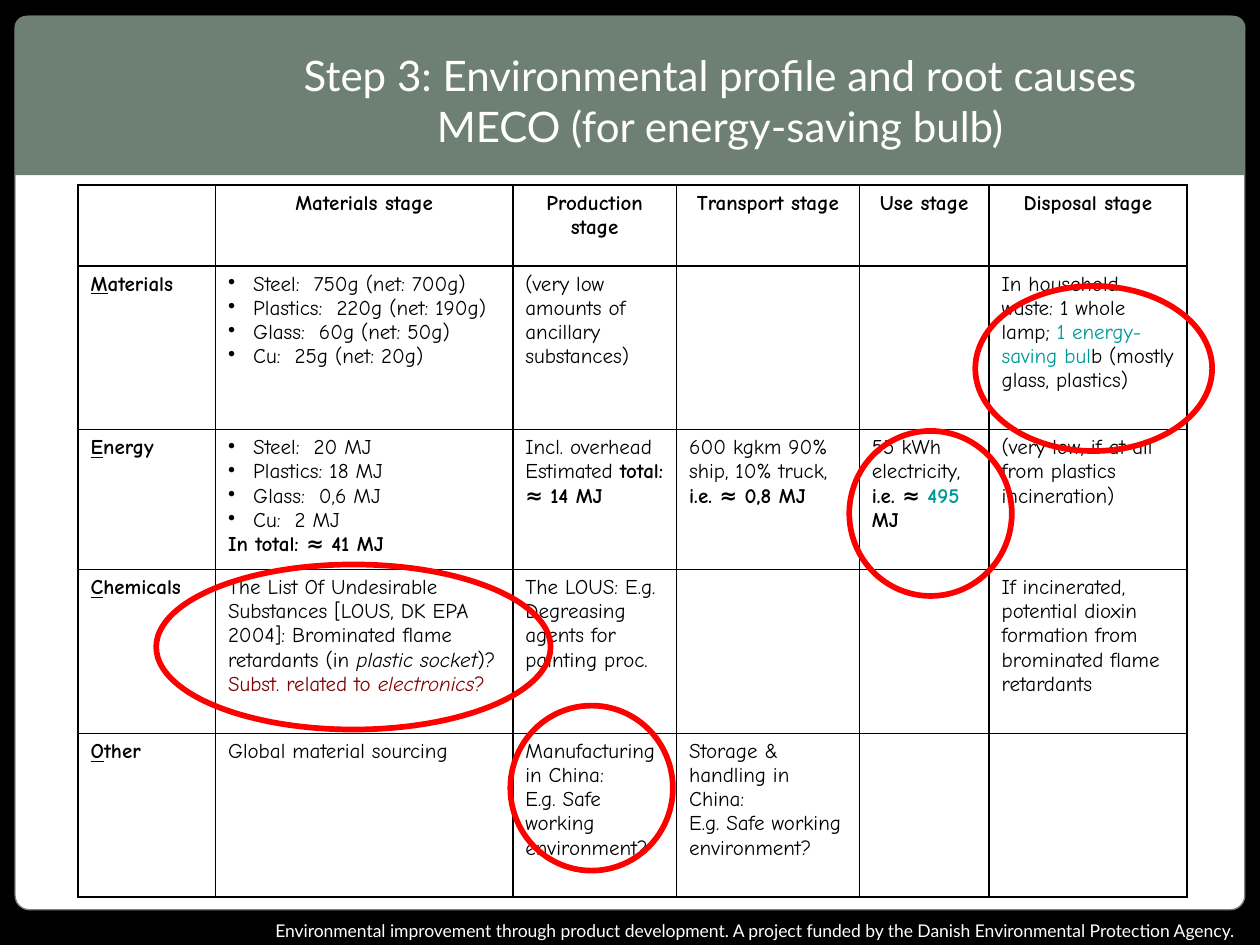
from dataclasses import dataclass

from lxml.etree import SubElement
from pptx import Presentation
from pptx.dml.color import RGBColor
from pptx.enum.shapes import MSO_SHAPE
from pptx.enum.text import MSO_ANCHOR, MSO_AUTO_SIZE, PP_ALIGN
from pptx.oxml.ns import qn
from pptx.util import Inches, Pt


@dataclass(frozen=True)
class Theme:
    black: RGBColor = RGBColor(0, 0, 0)
    white: RGBColor = RGBColor(255, 255, 255)
    grey: RGBColor = RGBColor(0x80, 0x80, 0x80)
    green: RGBColor = RGBColor(0x6E, 0x80, 0x73)
    red: RGBColor = RGBColor(255, 0, 0)
    teal: RGBColor = RGBColor(0, 0x99, 0x99)
    maroon: RGBColor = RGBColor(0x80, 0, 0)
    heading_font: str = "Lato"
    table_font: str = "Comic Neue"
    title_size: Pt = Pt(24)
    table_size: Pt = Pt(12)
    footer_size: Pt = Pt(10)


THEME = Theme()
TITLE = "Step 3: Environmental profile and root causes\vMECO (for energy-saving bulb)"
FOOTER = ("Environmental improvement through product development. "
          "A project funded by the Danish Environmental Protection Agency.")
STAGES = ["Materials stage", "Production stage", "Transport stage", "Use stage", "Disposal stage"]
COLUMN_WIDTHS = [1.09, 2.36, 1.3, 1.45, 1.03, 1.57]
ROW_HEIGHTS = [0.64, 1.3, 1.11, 1.3, 1.3]
BULLET_INDENT = Inches(0.2)

# Each cell is a list of paragraphs, each paragraph a list of (text, style) runs.
MECO = {
    "Materials": [
        [[("• Steel:  750g (net: 700g)", "")], [("• Plastics:  220g (net: 190g)", "")],
         [("• Glass:  60g (net: 50g)", "")], [("• Cu:  25g (net: 20g)", "")]],
        [[("(very low amounts of ancillary substances)", "")]],
        [],
        [],
        [[("In household waste: 1 whole lamp; ", ""), ("1 energy-saving bul", "teal"),
          ("b (mostly glass, plastics)", "")]],
    ],
    "Energy": [
        [[("• Steel:  20 MJ", "")], [("• Plastics: 18 MJ", "")], [("• Glass:  0,6 MJ", "")],
         [("• Cu:  2 MJ", "")], [("In total: ≈ 41 MJ", "bold")]],
        [[("Incl. overhead Estimated ", ""), ("total: ≈ 14 MJ", "bold")]],
        [[("600 kgkm 90% ship, 10% truck, ", ""), ("i.e. ≈ 0,8 MJ", "bold")]],
        [[("55 kWh electricity, ", ""), ("i.e. ≈ ", "bold"), ("495", "bold teal"), (" MJ", "bold")]],
        [[("(very low, if at all from plastics incineration)", "")]],
    ],
    "Chemicals": [
        [[("The List Of Undesirable Substances [LOUS, DK EPA 2004]: Brominated flame retardants (in ", ""),
          ("plastic socket", "italic"), (")? ", ""), ("Subst. related to ", "maroon"),
          ("electronics", "italic maroon"), ("?", "maroon")]],
        [[("The LOUS: E.g. Degreasing agents for painting proc.", "")]],
        [],
        [],
        [[("If incinerated, potential dioxin formation from brominated flame retardants", "")]],
    ],
    "Other": [
        [[("Global material sourcing", "")]],
        [[("Manufacturing in China:\nE.g. Safe working environment?", "")]],
        [[("Storage & handling in China:\nE.g. Safe working environment?", "")]],
        [],
        [],
    ],
}
HOT_SPOTS = [(6.74, 3.42, 1.29), (4.05, 5.6, 1.29), (1.24, 4.48, 3.13), (7.74, 2.27, 1.88)]
HOT_SPOT_HEIGHT = 1.31


def inches(*lengths):
    return [Inches(length) for length in lengths]


def set_font(paragraph, name, size, color):
    paragraph.font.name = name
    paragraph.font.size = size
    paragraph.font.color.rgb = color


def add_panel(slide, preset, box, fill=None, line=None, line_width=0.75, rounding=None):
    panel = slide.shapes.add_shape(preset, *inches(*box))
    panel.shadow.inherit = False
    if rounding is not None:
        panel.adjustments[0] = rounding
    if fill is None:
        panel.fill.background()
    else:
        panel.fill.solid()
        panel.fill.fore_color.rgb = fill
    if line is None:
        panel.line.fill.background()
    else:
        panel.line.color.rgb = line
        panel.line.width = Pt(line_width)


def add_frame(slide, box):
    left, top, width, height = box
    rounded = MSO_SHAPE.ROUNDED_RECTANGLE
    add_panel(slide, MSO_SHAPE.RECTANGLE, (0, 0, 10, 7.5), THEME.black)
    add_panel(slide, rounded, box, THEME.white, THEME.grey, rounding=0.016)
    add_panel(slide, MSO_SHAPE.RECTANGLE, (left, top + 0.08, width, 1.18), THEME.green)
    add_panel(slide, rounded, (left, top, width, 0.18), THEME.green, THEME.green, rounding=0.5)


def add_footer(slide, box):
    footer = slide.shapes.add_textbox(*inches(*box)).text_frame
    footer.word_wrap = True
    footer.text = FOOTER
    footer.paragraphs[0].alignment = PP_ALIGN.RIGHT
    set_font(footer.paragraphs[0], THEME.heading_font, THEME.footer_size, THEME.white)


def place_title(slide, box):
    title = slide.shapes.title
    title.left, title.top, title.width, title.height = inches(*box)
    title.element.getparent().append(title.element)
    frame = title.text_frame
    frame.text = TITLE
    frame.word_wrap = True
    frame.auto_size = MSO_AUTO_SIZE.NONE
    frame.vertical_anchor = MSO_ANCHOR.MIDDLE
    frame.paragraphs[0].alignment = PP_ALIGN.CENTER
    set_font(frame.paragraphs[0], THEME.heading_font, THEME.title_size, THEME.white)


def add_bullet(paragraph):
    properties = paragraph._p.get_or_add_pPr()
    properties.set("marL", str(BULLET_INDENT))
    properties.set("indent", str(-BULLET_INDENT))
    SubElement(properties, qn("a:buChar"), char="•")


def add_run(paragraph, text, style):
    for number, line in enumerate(text.split("\n")):
        if number:
            paragraph.add_line_break()
        run = paragraph.add_run()
        run.text = line
        for word in style.split():
            if word in ("teal", "maroon"):
                run.font.color.rgb = getattr(THEME, word)
            else:
                setattr(run.font, word, True)


def fill_cell(cell, paragraphs, alignment=PP_ALIGN.LEFT):
    properties = cell._tc.get_or_add_tcPr()
    for side in ("lnL", "lnR", "lnT", "lnB"):
        border = SubElement(properties, qn(f"a:{side}"), w=str(Pt(1)))
        color = SubElement(border, qn("a:solidFill"))
        SubElement(color, qn("a:srgbClr"), val=str(THEME.black))
    cell.fill.background()
    for number, runs in enumerate(paragraphs):
        paragraph = cell.text_frame.add_paragraph() if number else cell.text_frame.paragraphs[0]
        paragraph.alignment = alignment
        if runs[0][0].startswith("• "):
            add_bullet(paragraph)
        set_font(paragraph, THEME.table_font, THEME.table_size, THEME.black)
        for text, style in runs:
            add_run(paragraph, text.removeprefix("• "), style)


def add_meco_table(slide, box):
    table = slide.shapes.add_table(len(ROW_HEIGHTS), len(COLUMN_WIDTHS), *inches(*box)).table
    table.first_row = table.horz_banding = False
    for column, width in zip(table.columns, COLUMN_WIDTHS):
        column.width = Inches(width)
    for row, height in zip(table.rows, ROW_HEIGHTS):
        row.height = Inches(height)
    fill_cell(table.cell(0, 0), [])
    for column, stage in enumerate(STAGES, 1):
        fill_cell(table.cell(0, column), [[(stage, "bold")]], PP_ALIGN.CENTER)
    for row, (category, entries) in enumerate(MECO.items(), 1):
        heading = [(category[0], "bold underline"), (category[1:], "bold")]
        for column, paragraphs in enumerate([[heading], *entries]):
            fill_cell(table.cell(row, column), paragraphs)


def add_hot_spots(slide):
    for left, top, width in HOT_SPOTS:
        add_panel(slide, MSO_SHAPE.OVAL, (left, top, width, HOT_SPOT_HEIGHT),
                  line=THEME.red, line_width=3.25)


def main():
    deck = Presentation()
    deck.slide_width, deck.slide_height = inches(10, 7.5)
    slide = deck.slides.add_slide(deck.slide_layouts[5])
    add_frame(slide, (0.12, 0.13, 9.76, 7.09))
    add_footer(slide, (0.2, 7.25, 9.69, 0.27))
    add_meco_table(slide, (0.62, 1.47, 8.81, 5.64))
    place_title(slide, (1.61, 0.36, 8.21, 0.87))
    add_hot_spots(slide)
    deck.save("out.pptx")


if __name__ == "__main__":
    main()
